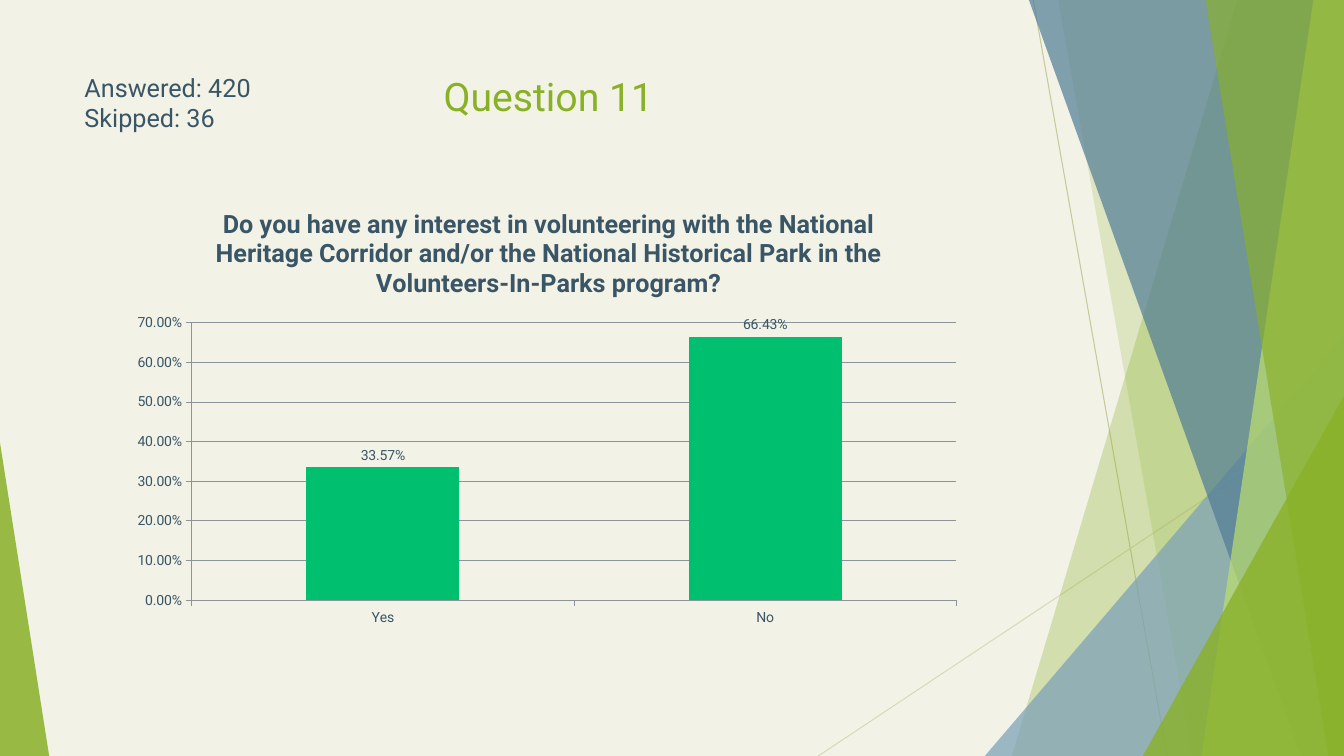
from dataclasses import dataclass

import lxml.etree
import pptx
import pptx.chart.data
import pptx.dml.color
import pptx.enum.chart
import pptx.enum.shapes
import pptx.enum.text
import pptx.oxml.ns
import pptx.util
from pptx.util import Cm

FONT = "Roboto"
GREEN = "89B128"
SLATE = "3A5666"
AXIS_GRAY = "8A949A"
WIDTH, HEIGHT = 33.87, 19.05
QUESTION = (
    "Do you have any interest in volunteering with the National Heritage Corridor "
    "and/or the National Historical Park in the Volunteers-In-Parks program?"
)


@dataclass
class Ray:
    """A thin line, in centimetres."""
    start: tuple[float, float]
    end: tuple[float, float]
    color: str


@dataclass
class Band:
    """A full-height area from a slanted left edge to the right slide edge."""
    top_left: float
    bottom_left: float
    color: str
    opacity: int


@dataclass
class Wedge:
    """A right triangle standing on the bottom edge; apex 0 is left, 1 is right."""
    left: float
    width: float
    height: float
    apex: float
    color: str
    opacity: int


RAYS = [
    Ray((26.04, 0), (29.41, HEIGHT), "C8C89A"),
    Ray((WIDTH, 10.24), (20.62, HEIGHT), "D9D9B9"),
]
FACETS = [
    Band(31.19, 25.5, GREEN, 30),
    Band(26.67, 30.05, GREEN, 20),
    Wedge(24.82, 9.05, 10.59, 1, "7BA1B7", 72),
    Band(25.93, 32.79, "517C94", 70),
    Band(33.1, 30.28, "BEDF70", 70),
    Band(30.38, 33.48, GREEN, 65),
    Wedge(28.8, 5.07, 9.07, 1, GREEN, 80),
    Wedge(0, 1.24, 7.9, 0, GREEN, 85),
]


def rgb(color: str) -> pptx.dml.color.RGBColor:
    return pptx.dml.color.RGBColor.from_string(color)


def add_child(parent, tag: str, **attributes: str):
    """Append a DrawingML or chart element such as a:alpha."""
    child = lxml.etree.SubElement(parent, pptx.oxml.ns.qn(tag))
    for name, value in attributes.items():
        child.set(name, value)
    return child


def style_font(font, size: float, color: str, bold: bool = False) -> None:
    font.name = FONT
    font.size = pptx.util.Pt(size)
    font.bold = bold
    font.color.rgb = rgb(color)


def add_run(paragraph, text: str, size: float, color: str, bold: bool = False) -> None:
    run = paragraph.add_run()
    run.text = text
    style_font(run.font, size, color, bold)


def draw_ray(slide, ray: Ray) -> None:
    line = slide.shapes.add_connector(
        pptx.enum.shapes.MSO_CONNECTOR.STRAIGHT, *map(Cm, ray.start + ray.end))
    line.line.color.rgb = rgb(ray.color)
    line.line.width = pptx.util.Pt(0.75)
    add_child(line._element.spPr, "a:effectLst")


def draw_facet(slide, facet: Band | Wedge) -> None:
    if isinstance(facet, Band):
        builder = slide.shapes.build_freeform(Cm(facet.top_left), 0)
        corners = [(WIDTH, 0), (WIDTH, HEIGHT), (facet.bottom_left, HEIGHT)]
        builder.add_line_segments([(Cm(x), Cm(y)) for x, y in corners], close=True)
        shape = builder.convert_to_shape()
    else:
        shape = slide.shapes.add_shape(
            pptx.enum.shapes.MSO_SHAPE.ISOSCELES_TRIANGLE,
            Cm(facet.left), Cm(HEIGHT - facet.height), Cm(facet.width), Cm(facet.height))
        shape.adjustments[0] = facet.apex
    shape.shadow.inherit = False
    shape.line.fill.background()
    shape.fill.solid()
    shape.fill.fore_color.rgb = rgb(facet.color)
    solid_fill = shape._element.spPr.find(pptx.oxml.ns.qn("a:solidFill"))
    add_child(solid_fill[0], "a:alpha", val=str(facet.opacity * 1000))


def set_title(slide) -> None:
    title = slide.shapes.title
    title.left, title.top, title.width, title.height = Cm(1.88), Cm(1.7), Cm(23.88), Cm(3.66)
    frame = title.text_frame
    frame.vertical_anchor = pptx.enum.text.MSO_ANCHOR.TOP
    paragraph = frame.paragraphs[0]
    paragraph.alignment = pptx.enum.text.PP_ALIGN.CENTER
    add_run(paragraph, "Question 11", 28, GREEN)


def add_response_counts(slide) -> None:
    box = slide.shapes.add_textbox(Cm(1.88), Cm(1.7), Cm(4.85), Cm(1.8))
    frame = box.text_frame
    frame.word_wrap = True
    add_run(frame.paragraphs[0], "Answered: 420", 18, SLATE)
    add_run(frame.add_paragraph(), "Skipped: 36", 18, SLATE)


def place_plot(chart, x: float, y: float, w: float, h: float) -> None:
    """Fix the inner plot area, in fractions of the chart."""
    plot_area = chart._chartSpace.chart.plotArea
    for old in plot_area.findall(pptx.oxml.ns.qn("c:layout")):
        plot_area.remove(old)
    layout = add_child(plot_area, "c:layout")
    plot_area.insert(0, layout)
    manual = add_child(layout, "c:manualLayout")
    add_child(manual, "c:layoutTarget", val="inner")
    for side in ("xMode", "yMode"):
        add_child(manual, f"c:{side}", val="edge")
    for side, fraction in zip("xywh", (x, y, w, h)):
        add_child(manual, f"c:{side}", val=str(fraction))


def add_answer_chart(slide) -> None:
    data = pptx.chart.data.CategoryChartData(number_format="0.00%")
    data.categories = ["Yes", "No"]
    data.add_series("Series 1", [0.3357, 0.6643])
    chart = slide.shapes.add_chart(
        pptx.enum.chart.XL_CHART_TYPE.COLUMN_CLUSTERED,
        Cm(3.12), Cm(4.75), Cm(21.41), Cm(11.28), data).chart
    style_font(chart.font, 10, SLATE)
    chart.has_legend = False
    chart.has_title = True
    chart.chart_title.include_in_layout = False
    add_run(chart.chart_title.text_frame.paragraphs[0], QUESTION, 18, SLATE, bold=True)

    value_axis = chart.value_axis
    value_axis.minimum_scale, value_axis.maximum_scale = 0, 0.7
    value_axis.major_unit = 0.1
    value_axis.has_major_gridlines = True
    value_axis.tick_labels.number_format = "0.00%"
    value_axis.tick_labels.number_format_is_linked = False
    for axis in (chart.category_axis, value_axis):
        axis.major_tick_mark = pptx.enum.chart.XL_TICK_MARK.OUTSIDE
    for part in (chart.category_axis, value_axis, value_axis.major_gridlines):
        part.format.line.color.rgb = rgb(AXIS_GRAY)
        part.format.line.width = pptx.util.Pt(0.75)

    plot = chart.plots[0]
    plot.vary_by_categories = False
    plot.gap_width = 150
    fill = plot.series[0].format.fill
    fill.solid()
    fill.fore_color.rgb = rgb("00BF6F")
    labels = plot.series[0].data_labels
    labels.show_value = True
    labels.position = pptx.enum.chart.XL_LABEL_POSITION.OUTSIDE_END
    labels.number_format = "0.00%"
    labels.number_format_is_linked = False
    style_font(labels.font, 10, SLATE)
    place_plot(chart, 0.08, 0.3, 0.9, 0.62)


def main() -> None:
    presentation = pptx.Presentation()
    presentation.slide_width, presentation.slide_height = Cm(WIDTH), Cm(HEIGHT)
    slide = presentation.slides.add_slide(presentation.slide_layouts.get_by_name("Title Only"))
    slide.background.fill.solid()
    slide.background.fill.fore_color.rgb = rgb("F2F2E7")
    for ray in RAYS:
        draw_ray(slide, ray)
    for facet in FACETS:
        draw_facet(slide, facet)
    set_title(slide)
    add_answer_chart(slide)
    add_response_counts(slide)
    presentation.save("out.pptx")


if __name__ == "__main__":
    main()
